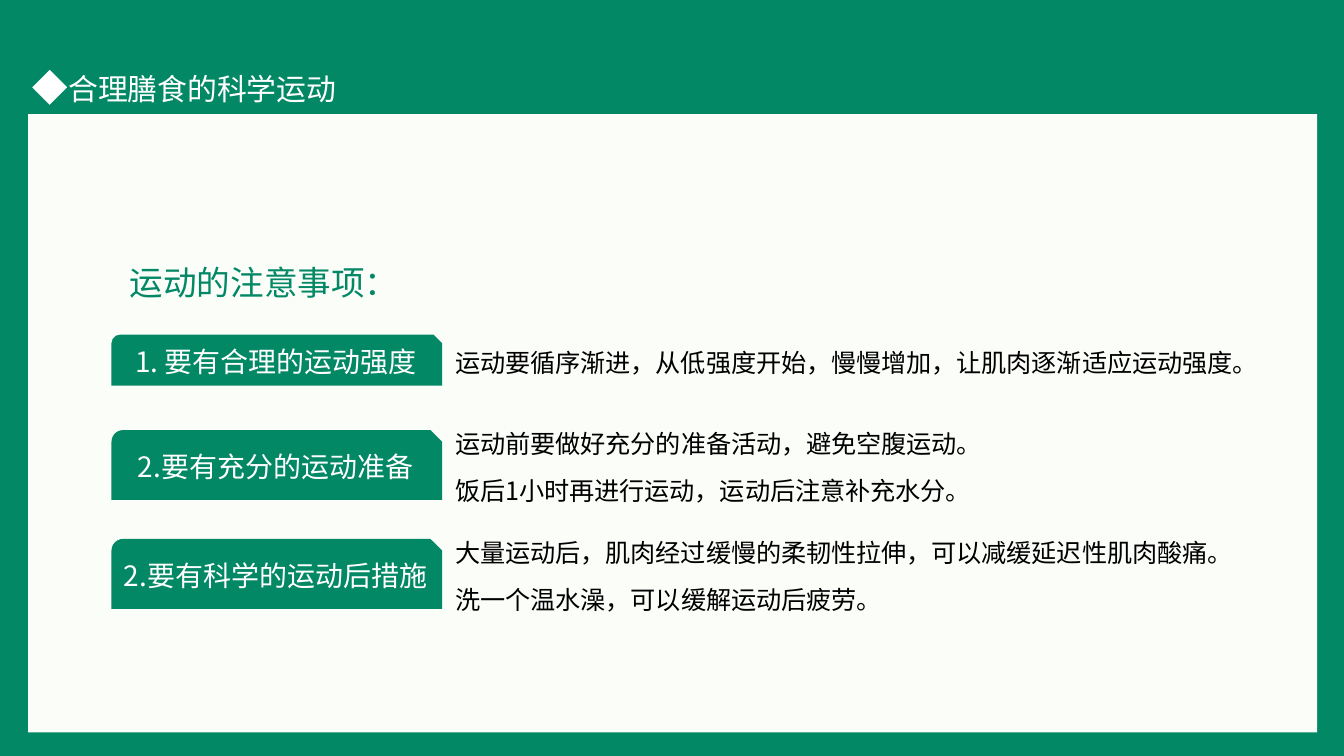
"""Build the slide on exercise precautions: three labelled rows of advice."""
from dataclasses import dataclass

from pptx import Presentation
from pptx.dml.color import RGBColor
from pptx.enum.shapes import MSO_SHAPE
from pptx.enum.text import MSO_ANCHOR, PP_ALIGN
from pptx.util import Inches, Pt

DIAMOND, PANEL, TAG = MSO_SHAPE.DIAMOND, MSO_SHAPE.RECTANGLE, MSO_SHAPE.SNIP_ROUND_RECTANGLE
LEFT, CENTER = PP_ALIGN.LEFT, PP_ALIGN.CENTER
MIDDLE = MSO_ANCHOR.MIDDLE

TITLE = "合理膳食的科学运动"
HEADING = "运动的注意事项："
ROWS = [
    {"label": "1. 要有合理的运动强度", "middle": 2.68, "height": 0.38,
     "lines": [("运动要循序渐进，从低强度开始，慢慢增加，让肌肉逐渐适应运动强度。", 6.26)]},
    {"label": "2.要有充分的运动准备", "middle": 3.46, "height": 0.52,
     "lines": [("运动前要做好充分的准备活动，避免空腹运动。", 4.18),
               ("饭后1小时再进行运动，运动后注意补充水分。", 4.1)]},
    {"label": "2.要有科学的运动后措施", "middle": 4.27, "height": 0.52,
     "lines": [("大量运动后，肌肉经过缓慢的柔韧性拉伸，可以减缓延迟性肌肉酸痛。", 6.07),
               ("洗一个温水澡，可以缓解运动后疲劳。", 3.42)]},
]


@dataclass(frozen=True)
class Theme:
    green: str = "028865"
    paper: str = "FBFDF9"
    white: str = "FFFFFF"
    black: str = "000000"
    title_font: str = "Calibri"
    body_font: str = "Noto Sans CJK SC"
    title: float = 16
    heading: float = 18
    label: float = 15
    body: float = 13.5


THEME = Theme()
WIDTH = 10
HEIGHT = WIDTH * 9 / 16
TAG_LEFT, TAG_WIDTH = 0.83, 2.46
LINE_LEFT = TAG_LEFT + TAG_WIDTH
LINE_HEIGHT, LINE_PITCH, LINE_DROP = 0.33, 0.35, 0.02


def write(box, text, size, color, font=THEME.body_font, align=LEFT):
    para = box.text_frame.paragraphs[0]
    para.text = text
    para.alignment = align
    para.font.size = Pt(size)
    para.font.name = font
    para.font.color.rgb = RGBColor.from_string(color)


def add_text(page, area, text, size, color, right_inset=0, **style):
    box = page.shapes.add_textbox(*map(Inches, area))
    box.text_frame.word_wrap = True
    box.text_frame.margin_right = Inches(right_inset)
    write(box, text, size, color, **style)


def add_block(page, kind, area, color):
    block = page.shapes.add_shape(kind, *map(Inches, area))
    block.shadow.inherit = False
    block.fill.solid()
    block.fill.fore_color.rgb = RGBColor.from_string(color)
    block.line.fill.background()
    return block


def add_row(page, row):
    middle, height, lines = row["middle"], row["height"], row["lines"]
    tag = add_block(page, TAG, (TAG_LEFT, middle - height / 2, TAG_WIDTH, height), THEME.green)
    frame = tag.text_frame
    frame.vertical_anchor = MIDDLE
    frame.margin_left = frame.margin_right = Inches(0.03)
    frame.margin_top = frame.margin_bottom = Inches(0.06)
    write(tag, row["label"], THEME.label, THEME.white, align=CENTER)
    span = (len(lines) - 1) * LINE_PITCH + LINE_HEIGHT
    top = middle + LINE_DROP - span / 2
    for index, (text, width) in enumerate(lines):
        area = (LINE_LEFT, top + index * LINE_PITCH, width, LINE_HEIGHT)
        add_text(page, area, text, THEME.body, THEME.black)


def main():
    deck = Presentation()
    deck.slide_width, deck.slide_height = Inches(WIDTH), Inches(HEIGHT)
    page = deck.slides.add_slide(deck.slide_layouts[6])
    page.background.fill.solid()
    page.background.fill.fore_color.rgb = RGBColor.from_string(THEME.green)
    add_text(page, (0.41, 0.48, 2.22, 0.37), TITLE, THEME.title, THEME.white,
             font=THEME.title_font)
    add_block(page, DIAMOND, (0.24, 0.52, 0.26, 0.26), THEME.white)
    add_block(page, PANEL, (0.21, 0.85, 9.59, 4.6), THEME.paper)
    add_text(page, (TAG_LEFT, 1.9, 2.02, 0.4), HEADING, THEME.heading, THEME.green,
             right_inset=0.1, align=CENTER)
    for row in ROWS:
        add_row(page, row)
    deck.save("out.pptx")


if __name__ == "__main__":
    main()
